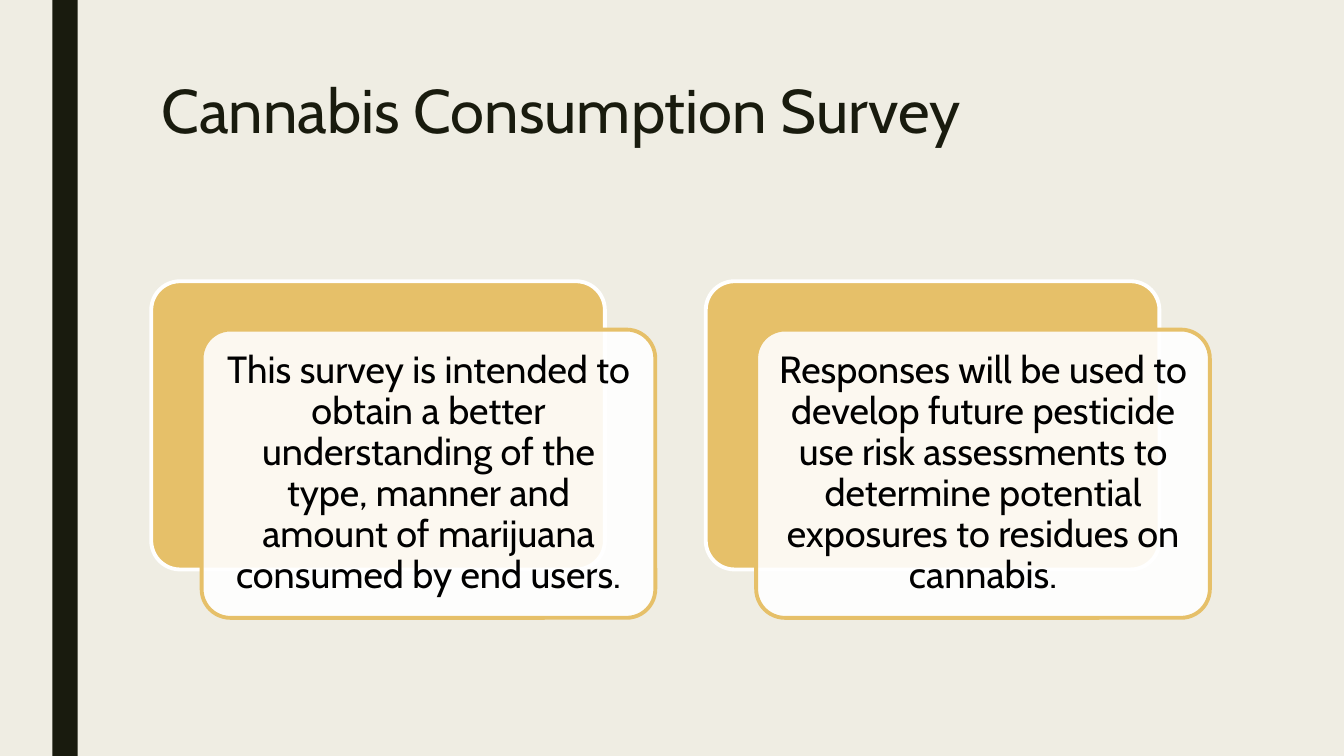
import pptx
import pptx.util
import pptx.dml.color
import pptx.enum.shapes
import pptx.enum.text
import pptx.oxml.ns
import lxml.etree

Inches = pptx.util.Inches
Pt = pptx.util.Pt
Shapes = pptx.enum.shapes.MSO_SHAPE

FONT = "Cabin"
PAPER, INK, GOLD, WHITE, BLACK = "EFEDE3", "191B0E", "E6C069", "FFFFFF", "000000"
STATEMENTS = [
    "This survey is intended to obtain a better understanding of the type, "
    "manner and amount of marijuana consumed by end users.",
    "Responses will be used to develop future pesticide use risk assessments "
    "to determine potential exposures to residues on cannabis.",
]


def paint(color_format, color):
    color_format.solid()
    color_format.fore_color.rgb = pptx.dml.color.RGBColor.from_string(color)


def add_panel(slide, kind, left, top, width, height, fill, line=None):
    panel = slide.shapes.add_shape(
        kind, Inches(left), Inches(top), Inches(width), Inches(height))
    panel.shadow.inherit = False
    paint(panel.fill, fill)
    if line:
        paint(panel.line.fill, line)
        panel.line.width = Pt(2.75)
        panel.adjustments[0] = 0.1
    else:
        panel.line.fill.background()
    return panel


def write(paragraph, words, size, color, spacing):
    paragraph.line_spacing = spacing
    run = paragraph.add_run()
    run.text = words
    run.font.name = FONT
    run.font.size = Pt(size)
    paint(run.font.fill, color)


def add_title(slide, left, top, width, height):
    title = slide.shapes.add_textbox(
        Inches(left), Inches(top), Inches(width), Inches(height))
    title.text_frame.word_wrap = True
    write(title.text_frame.paragraphs[0], "Cannabis Consumption Survey", 44, INK, 0.89)


def add_statement(slide, left, top, width, height, words):
    shift_x, shift_y = 0.5, 0.48
    card_size = width - shift_x, height - shift_y
    add_panel(slide, Shapes.ROUNDED_RECTANGLE, left, top, *card_size, GOLD, WHITE)
    card = add_panel(slide, Shapes.ROUNDED_RECTANGLE, left + shift_x, top + shift_y,
                     *card_size, WHITE, GOLD)
    white = card.fill._xPr.find(".//" + pptx.oxml.ns.qn("a:srgbClr"))
    lxml.etree.SubElement(white, pptx.oxml.ns.qn("a:alpha"), val="90000")

    frame = card.text_frame
    frame.word_wrap = True
    frame.vertical_anchor = pptx.enum.text.MSO_ANCHOR.MIDDLE
    frame.margin_left = frame.margin_right = Inches(0.11)
    frame.margin_top = frame.margin_bottom = Inches(0.11)
    frame.paragraphs[0].alignment = pptx.enum.text.PP_ALIGN.CENTER
    write(frame.paragraphs[0], words, 27, BLACK, 0.9)


def main():
    deck = pptx.Presentation()
    deck.slide_width, deck.slide_height = Inches(13.33), Inches(7.5)
    slide = deck.slides.add_slide(deck.slide_layouts[6])
    paint(slide.background.fill, PAPER)
    add_panel(slide, Shapes.RECTANGLE, 0.52, 0, 0.25, 7.5, INK)
    add_title(slide, 1.5, 0.75, 10.5, 1.62)
    for column, words in enumerate(STATEMENTS):
        add_statement(slide, 1.5 + 5.5 * column, 2.79, 5, 3.34, words)
    deck.save("out.pptx")


if __name__ == "__main__":
    main()
